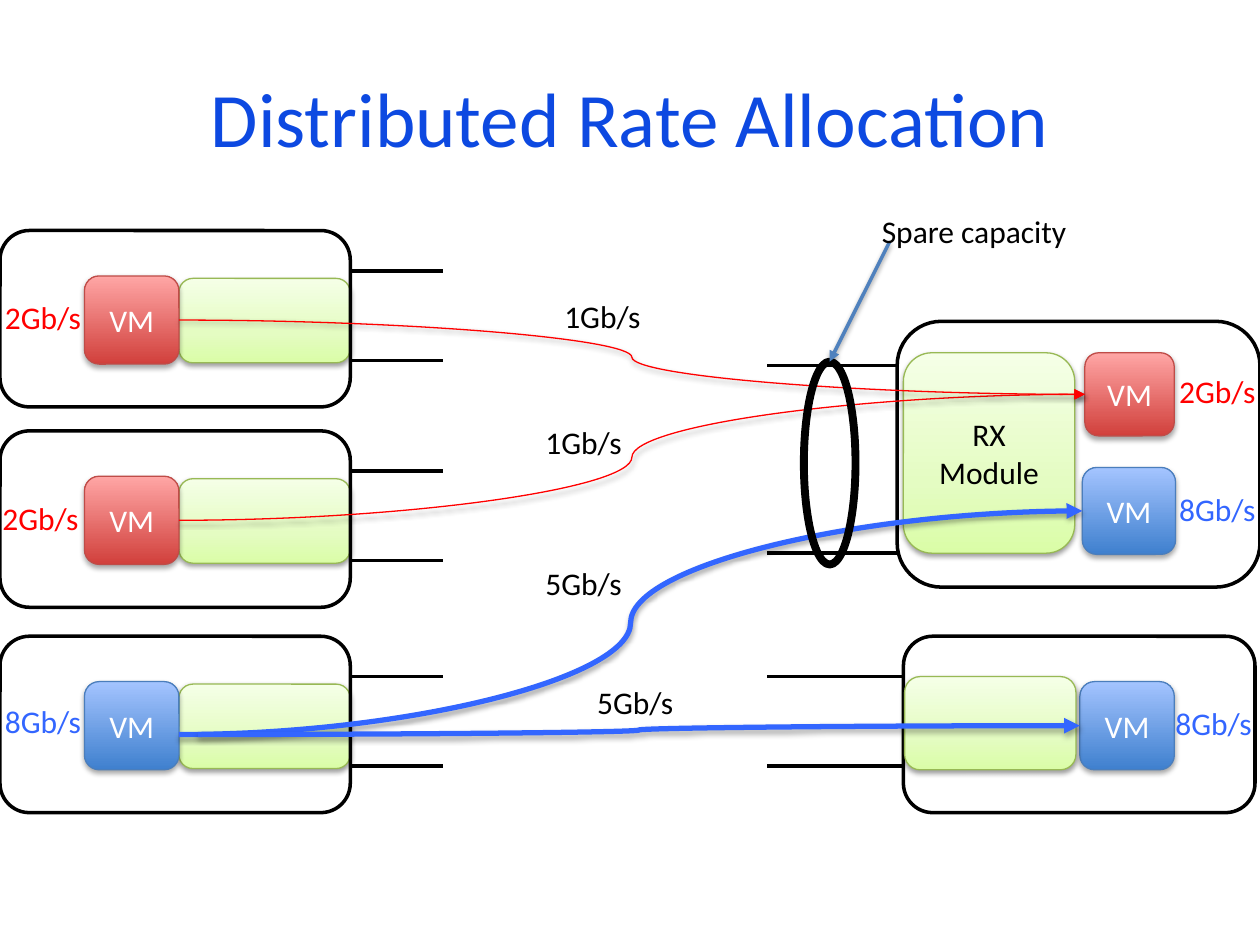
from copy import deepcopy
from dataclasses import dataclass

from pptx import Presentation
from pptx.dml.color import RGBColor
from pptx.enum.shapes import MSO_CONNECTOR, MSO_SHAPE
from pptx.enum.text import MSO_ANCHOR, MSO_AUTO_SIZE, PP_ALIGN
from pptx.oxml import parse_xml
from pptx.oxml.ns import nsdecls, qn
from pptx.util import Inches, Pt


@dataclass(frozen=True)
class Theme:
    font: str = "Calibri"
    title_size: int = 44
    body_size: int = 18
    title: str = "0D49E1"
    black: str = "000000"
    white: str = "FFFFFF"
    red: str = "FF0000"
    blue: str = "3366FF"
    pointer: str = "4F81BD"
    green_line: str = "98B955"
    red_line: str = "BF4C48"
    blue_line: str = "4B7EBC"
    green_fill: tuple = ((0, "DAFDA7"), (0.35, "E4FCC2"), (1, "F5FFE7"))
    red_fill: tuple = ((0, "D1403C"), (1, "FFA6A5"))
    blue_fill: tuple = ((0, "3F80CE"), (1, "A4C4FF"))
    soft_shadow: tuple = (38, 1.6)
    firm_shadow: tuple = (35, 1.8)


class SlideBuilder:
    def __init__(self, slide, theme):
        self.slide = slide
        self.theme = theme

    def format_text(self, paragraph, color, size, alignment):
        paragraph.alignment = alignment
        paragraph.font.name = self.theme.font
        paragraph.font.size = Pt(size)
        paragraph.font.color.rgb = RGBColor.from_string(color)

    def title(self, text):
        shape = self.slide.shapes.title
        shape.left, shape.top = Inches(0.5), Inches(0.3)
        shape.width, shape.height = Inches(9), Inches(1.25)
        frame = shape.text_frame
        frame.text = text
        frame.vertical_anchor = MSO_ANCHOR.MIDDLE
        self.format_text(frame.paragraphs[0], self.theme.title, self.theme.title_size, PP_ALIGN.CENTER)

    def label(self, text, left, top, color, width=0.82):
        shape = self.slide.shapes.add_textbox(Inches(left), Inches(top), Inches(width), Inches(0.4))
        frame = shape.text_frame
        frame.text = text
        frame.word_wrap = False
        frame.auto_size = MSO_AUTO_SIZE.SHAPE_TO_FIT_TEXT
        self.format_text(frame.paragraphs[0], color, self.theme.body_size, PP_ALIGN.LEFT)

    def shadow(self, effects, strength):
        alpha, distance = strength
        effects.append(parse_xml(
            f'<a:outerShdw {nsdecls("a")} blurRad="{Pt(3.1)}" dist="{Pt(distance)}" '
            f'dir="5400000" rotWithShape="0"><a:srgbClr val="{self.theme.black}">'
            f'<a:alpha val="{alpha * 1000}"/></a:srgbClr></a:outerShdw>'))

    def outline(self, left, top, width, height, kind=MSO_SHAPE.ROUNDED_RECTANGLE, color=None, weight=2):
        shape = self.slide.shapes.add_shape(kind, Inches(left), Inches(top), Inches(width), Inches(height))
        shape.shadow.inherit = False
        shape.fill.background()
        shape.line.color.rgb = RGBColor.from_string(color or self.theme.black)
        shape.line.width = Pt(weight)
        return shape

    def gradient_box(self, left, top, width, height, stops, line, strength):
        shape = self.outline(left, top, width, height, color=line, weight=0.75)
        shape.fill.gradient()
        shape.fill.gradient_angle = 90
        properties = shape._element.spPr
        stop_list = properties.find(qn("a:gradFill")).find(qn("a:gsLst"))
        for _ in stops[2:]:
            stop_list.append(deepcopy(stop_list[-1]))
        for stop, (position, color) in zip(shape.fill.gradient_stops, stops):
            stop.position = position
            stop.color.rgb = RGBColor.from_string(color)
        self.shadow(properties.find(qn("a:effectLst")), strength)
        return shape

    def box_text(self, shape, text, color):
        shape.text_frame.text = text
        shape.text_frame.vertical_anchor = MSO_ANCHOR.MIDDLE
        self.format_text(shape.text_frame.paragraphs[0], color, self.theme.body_size, PP_ALIGN.CENTER)

    def module(self, left, top, height=0.67, text=None):
        shape = self.gradient_box(left, top, 1.36, height, self.theme.green_fill,
                                  self.theme.green_line, self.theme.soft_shadow)
        if text:
            self.box_text(shape, text, self.theme.black)

    def machine(self, left, top, color, width=0.75, height=0.7):
        theme = self.theme
        stops, line = {theme.red: (theme.red_fill, theme.red_line),
                       theme.blue: (theme.blue_fill, theme.blue_line)}[color]
        shape = self.gradient_box(left, top, width, height, stops, line, theme.firm_shadow)
        self.box_text(shape, "VM", theme.white)
        return shape

    def line(self, start, end, color, weight, kind=MSO_CONNECTOR.STRAIGHT,
             source=None, target=None, target_site=1, strength=None):
        connector = self.slide.shapes.add_connector(kind, *map(Inches, start + end))
        connector.line.color.rgb = RGBColor.from_string(color)
        connector.line.width = Pt(weight)
        effects = parse_xml(f'<a:effectLst {nsdecls("a")}/>')
        connector._element.spPr.append(effects)
        if source:
            connector.begin_connect(source, 3)
        if target:
            connector.end_connect(target, target_site)
            outline = connector._element.spPr.find(qn("a:ln"))
            outline.append(parse_xml(f'<a:tailEnd {nsdecls("a")} type="triangle"/>'))
            self.shadow(effects, strength)

    def ports(self, start, end, heights):
        for height in heights:
            self.line((start, height), (end, height), self.theme.black, 2)

    def flow(self, start, end, color, weight, target, strength, source=None):
        self.line(start, end, color, weight, MSO_CONNECTOR.CURVE, source, target, strength=strength)


def main():
    theme = Theme()
    presentation = Presentation()
    presentation.slide_width, presentation.slide_height = Inches(10), Inches(7.5)
    slide = presentation.slides.add_slide(presentation.slide_layouts[5])
    builder = SlideBuilder(slide, theme)
    builder.title("Distributed Rate Allocation")

    builder.module(7.17, 2.8, 1.59, "RX Module")
    builder.outline(7.12, 2.55, 2.88, 2.11)
    red_receiver = builder.machine(8.61, 2.8, theme.red, 0.71, 0.66)
    blue_receiver = builder.machine(8.59, 3.71, theme.blue, 0.74, 0.69)
    builder.ports(6.09, 7.12, (2.9, 4.39))

    senders = []
    for top, color, rate, label_left, label_top in (
        (1.83, theme.red, "2Gb/s", -0.06, 2.32),
        (3.42, theme.red, "2Gb/s", -0.08, 3.91),
        (5.05, theme.blue, "8Gb/s", -0.06, 5.52),
    ):
        builder.module(1.42, top + 0.38)
        senders.append(builder.machine(0.67, top + 0.36, color))
        builder.outline(0, top, 2.78, 1.4)
        builder.ports(2.78, 3.52, (top + 0.32, top + 1.03))
        builder.label(rate, label_left, label_top, color)

    lower_receiver = builder.machine(8.57, 5.41, theme.blue)
    builder.outline(7.17, 5.05, 2.79, 1.4)
    builder.ports(7.17, 6.09, (5.37, 6.08))
    builder.module(7.18, 5.37, 0.74)

    for text, left, top, color in (
        ("2Gb/s", 9.26, 2.9, theme.red),
        ("8Gb/s", 9.26, 3.84, theme.blue),
        ("8Gb/s", 9.23, 5.54, theme.blue),
        ("1Gb/s", 4.38, 2.31, theme.black),
        ("1Gb/s", 4.23, 3.31, theme.black),
        ("5Gb/s", 4.23, 4.43, theme.black),
        ("5Gb/s", 4.64, 5.37, theme.black),
    ):
        builder.label(text, left, top, color)

    builder.flow((1.42, 5.83), (8.59, 4.06), theme.blue, 3, blue_receiver, theme.firm_shadow)
    for sender, height in ((senders[1], 4.13), (senders[0], 2.55)):
        builder.flow((1.42, height), (8.61, 3.13), theme.red, 0.75, red_receiver, theme.soft_shadow, sender)
    builder.flow((1.57, 5.83), (8.57, 5.76), theme.blue, 3, lower_receiver, theme.firm_shadow)

    capacity_ring = builder.outline(6.38, 2.87, 0.41, 1.61, MSO_SHAPE.OVAL, weight=4.5)
    builder.line((7.06, 1.92), (6.58, 2.87), theme.pointer, 2,
                 target=capacity_ring, target_site=0, strength=theme.soft_shadow)
    builder.label("Spare capacity", 6.9, 1.63, theme.black, 1.69)
    presentation.save("out.pptx")


if __name__ == "__main__":
    main()
